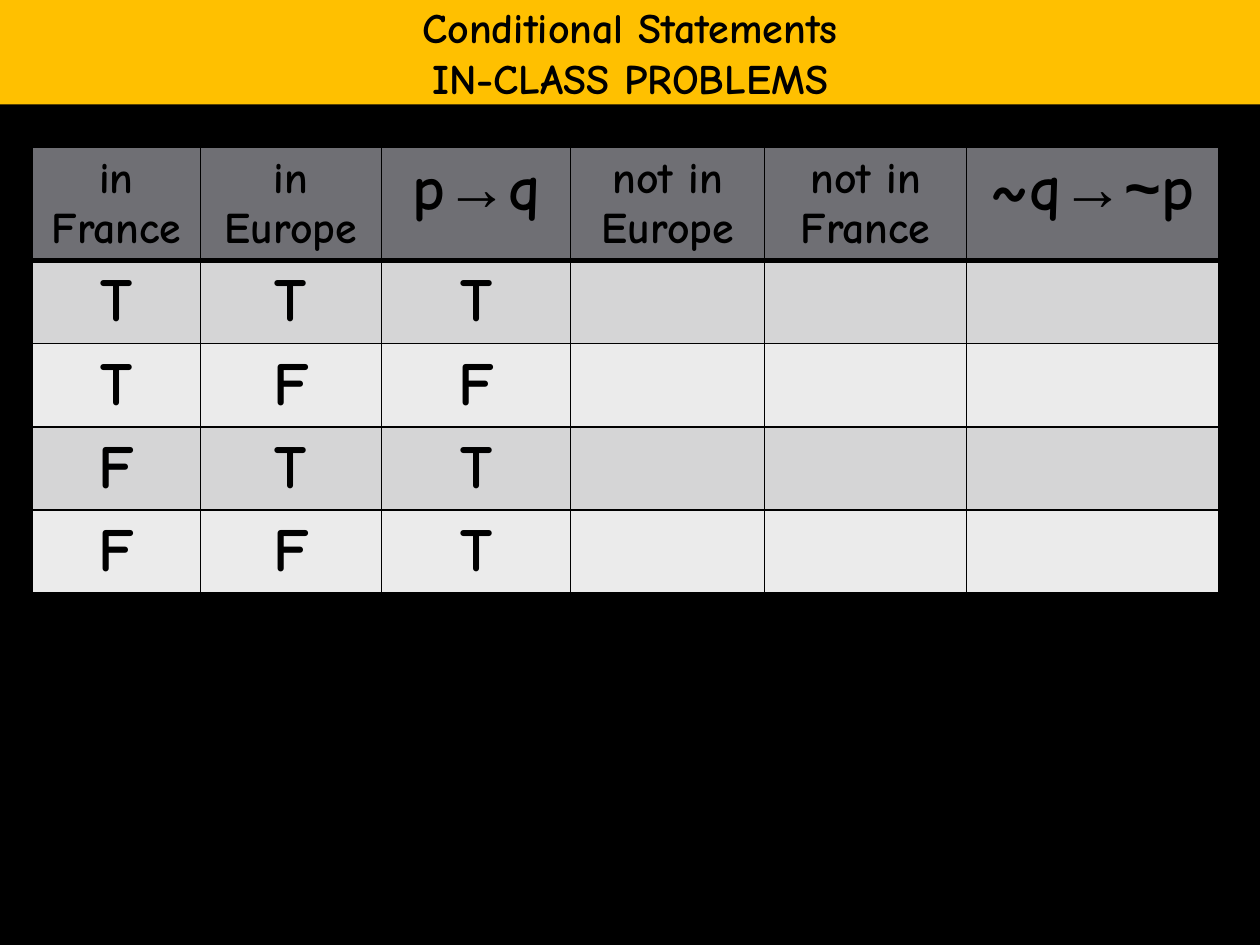
from lxml import etree
from pptx import Presentation
from pptx.dml.color import RGBColor
from pptx.enum import shapes, text
from pptx.oxml import ns
from pptx.util import Inches, Pt

COLORS = {"black": "000000", "banner": "FFC000", "header": "6F6F74",
          "odd": "D5D5D6", "even": "EBEBEB"}
FONT = "Comic Neue"


def rgb(name):
    return RGBColor.from_string(COLORS[name])


def write(p, content, size, font=FONT, color="black", bold=True):
    p.alignment = text.PP_ALIGN.CENTER
    r = p.add_run()
    r.text = content
    r.font.size, r.font.name, r.font.bold = Pt(size), font, bold
    r.font.color.rgb = rgb(color)


prs = Presentation()
prs.slide_width, prs.slide_height = Inches(10), Inches(7.5)
s = prs.slides.add_slide(prs.slide_layouts[6])
s.background.fill.solid()
s.background.fill.fore_color.rgb = rgb("black")

# Title banner
sp = s.shapes.add_shape(shapes.MSO_SHAPE.RECTANGLE, 0, 0, prs.slide_width, Inches(0.83))
sp.shadow.inherit = False
sp.fill.solid()
sp.fill.fore_color.rgb = rgb("banner")
sp.line.fill.background()
tf = sp.text_frame
tf.word_wrap = False
tf.vertical_anchor = text.MSO_ANCHOR.MIDDLE
write(tf.paragraphs[0], "Conditional Statements", 24)
write(tf.add_paragraph(), "IN-CLASS PROBLEMS", 24)

# Truth table: each header is a list of (text, size, font) runs
headers = [
    [("in France", 25, FONT)],
    [("in Europe", 25, FONT)],
    [("p", 36, FONT), ("→", 36, "Arial"), ("q", 36, FONT)],
    [("not in Europe", 25, FONT)],
    [("not in France", 25, FONT)],
    [("~q", 36, FONT), ("→~", 36, "Arial"), ("p", 36, FONT)],
]
values = ["TTT", "TFF", "FTT", "FFT"]
rows = [headers] + [[[(v, 35, FONT)] for v in row] for row in values]
widths = [1.33, 1.44, 1.5, 1.54, 1.6, 2]
heights = [0.89] + [0.66] * len(values)

table = s.shapes.add_table(len(rows), len(widths), Inches(0.26), Inches(1.17),
                           Inches(sum(widths)), Inches(sum(heights))).table
for column, width in zip(table.columns, widths):
    column.width = Inches(width)
for row, height in zip(table.rows, heights):
    row.height = Inches(height)

for i, row in enumerate(rows):
    fill = "header" if i == 0 else "odd" if i % 2 else "even"
    # The rule between header and body is heavier
    borders = {"lnL": 1, "lnR": 1, "lnT": 3 if i == 1 else 1, "lnB": 3 if i == 0 else 1}
    for j in range(len(widths)):
        cell = table.cell(i, j)
        cell.fill.solid()
        cell.fill.fore_color.rgb = rgb(fill)
        for content, size, font in row[j] if j < len(row) else []:
            write(cell.text_frame.paragraphs[0], content, size, font=font)
        tc_pr = cell._tc.get_or_add_tcPr()
        for k, (tag, weight) in enumerate(borders.items()):
            ln = etree.Element(ns.qn("a:" + tag), w=str(Pt(weight)))
            solid = etree.SubElement(ln, ns.qn("a:solidFill"))
            etree.SubElement(solid, ns.qn("a:srgbClr"), val=COLORS["black"])
            tc_pr.insert(k, ln)

prs.save("out.pptx")
